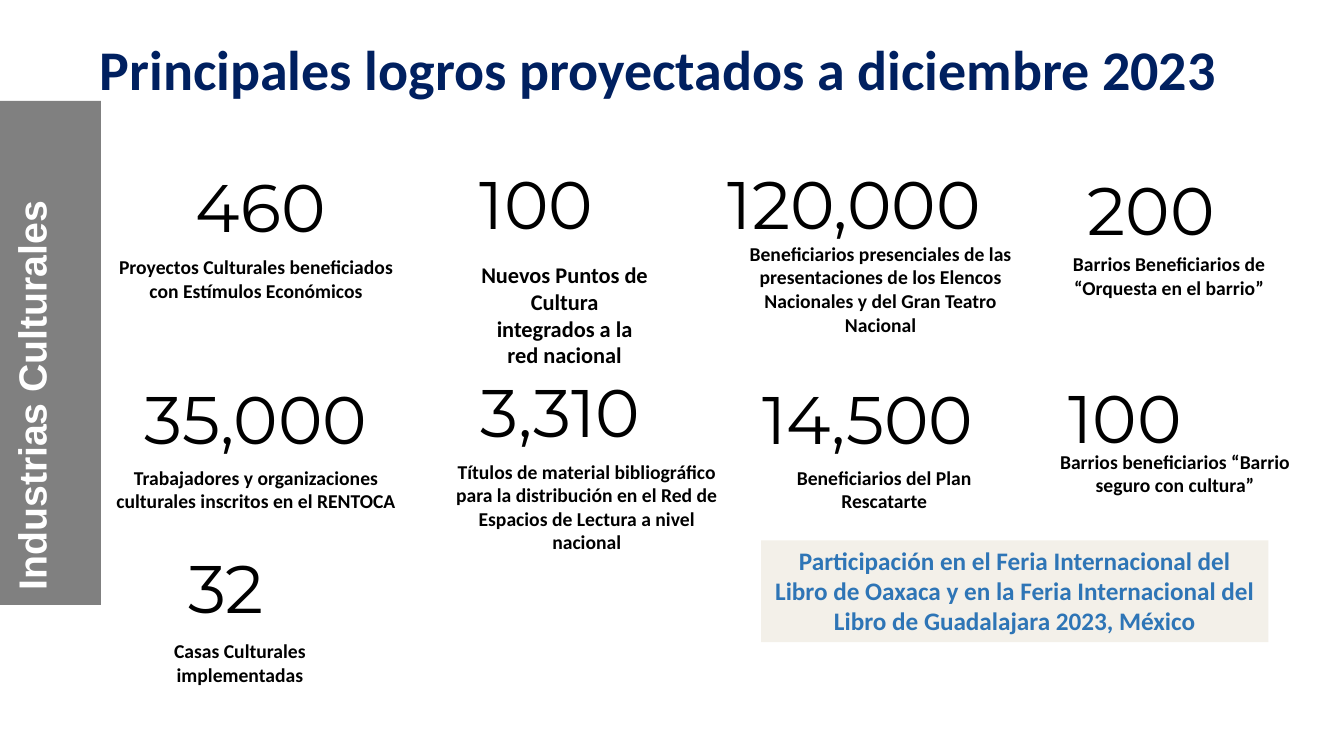
from pptx import Presentation
from pptx.dml.color import RGBColor
from pptx.enum.shapes import MSO_SHAPE
from pptx.enum.text import MSO_ANCHOR, PP_ALIGN
from pptx.util import Inches, Pt

LEFT, CENTER = PP_ALIGN.LEFT, PP_ALIGN.CENTER
TOP, MIDDLE = MSO_ANCHOR.TOP, MSO_ANCHOR.MIDDLE
RECT = MSO_SHAPE.RECTANGLE

# Content
TITLE = "Principales logros proyectados a diciembre 2023"
SIDE = "Industrias Culturales"
BANNER = ("Participación en el Feria Internacional del Libro de Oaxaca y en la "
          "Feria Internacional del Libro de Guadalajara 2023, México")

# Figure, its box and alignment; caption, its box and size
GOALS = [
    ("460", (1.5, 1.59, 2.17, 0.91), CENTER,
     "Proyectos Culturales beneficiados con Estímulos Económicos",
     (0.98, 2.48, 3.12, 0.57), 14),
    ("100", (4.66, 1.56, 1.55, 0.91), LEFT,
     "Nuevos Puntos de Cultura integrados a la red nacional",
     (4.66, 2.54, 1.88, 0.91), 16),
    ("120,000", (7.12, 1.56, 3.12, 0.91), LEFT,
     "Beneficiarios presenciales de las presentaciones de los Elencos "
     "Nacionales y del Gran Teatro Nacional",
     (7.12, 2.35, 3.23, 0.81), 14),
    ("200", (10.69, 1.62, 1.48, 0.85), LEFT,
     "Barrios Beneficiarios de “Orquesta en el barrio”",
     (10.34, 2.45, 2.51, 0.54), 14),
    ("35,000", (0.98, 3.69, 3.12, 0.91), CENTER,
     "Trabajadores y organizaciones culturales inscritos en el RENTOCA",
     (0.98, 4.57, 3.12, 0.57), 14),
    ("3,310", (4.67, 3.62, 2.22, 0.91), LEFT,
     "Títulos de material bibliográfico para la distribución en el Red de "
     "Espacios de Lectura a nivel nacional",
     (4.31, 4.51, 3.02, 0.81), 14),
    ("14,500", (7.46, 3.69, 2.67, 0.91), LEFT,
     "Beneficiarios del Plan Rescatarte",
     (7.46, 4.57, 2.62, 0.57), 14),
    ("100", (10.5, 3.68, 2.19, 0.82), LEFT,
     "Barrios beneficiarios “Barrio seguro con cultura”",
     (10.32, 4.41, 2.67, 0.73), 14),
    ("32", (1.77, 5.37, 1.1, 0.91), LEFT,
     "Casas Culturales implementadas",
     (1.44, 6.29, 1.88, 0.57), 14),
]


def color(code):
    return RGBColor.from_string(code)


def paint(shape, code):
    shape.fill.solid()
    shape.fill.fore_color.rgb = color(code)
    shape.line.fill.background()
    shape.shadow.inherit = False


def write(shape, text, size, ink="000000", face="Calibri", bold=True,
          align=CENTER, anchor=TOP):
    frame = shape.text_frame
    frame.word_wrap = True
    frame.vertical_anchor = anchor
    frame.text = text
    para = frame.paragraphs[0]
    para.alignment = align
    font = para.font
    font.name, font.size, font.bold = face, Pt(size), bold
    font.color.rgb = color(ink)
    return para


def add_text(box, *args, **style):
    shape = slide.shapes.add_textbox(*map(Inches, box))
    write(shape, *args, **style)
    return shape


def curve(a, b, c, d, steps=16):
    """Points along a cubic curve, after its start."""
    for i in range(1, steps + 1):
        t = i / steps
        u = 1 - t
        yield tuple(u**3 * p + 3 * u * u * t * q + 3 * u * t * t * r + t**3 * s
                    for p, q, r, s in zip(a, b, c, d))


deck = Presentation()
deck.slide_width, deck.slide_height = Inches(13.33), Inches(7.5)
slide = deck.slides.add_slide(deck.slide_layouts[5])

# Title
title = slide.shapes.title
title.left, title.top, title.width, title.height = map(
    Inches, (0.89, 0.04, 12.11, 1.36))
write(title, TITLE, 40, "002060", align=LEFT, anchor=MIDDLE).line_spacing = 0.9

# Side tab with two rounded corners
edge = [(0, 1.46), (0, 5.95),
        *curve((0, 5.95), (0, 6.2), (0.05, 6.39), (0.11, 6.39)),
        (0.68, 6.39), (0.68, 1.9),
        *curve((0.68, 1.9), (0.68, 1.66), (0.63, 1.46), (0.56, 1.46))]
pen = slide.shapes.build_freeform(0.56, 1.46, scale=Inches(1))
pen.add_line_segments(edge, close=True)
paint(pen.convert_to_shape(), "808080")

label = add_text((-2.16, 3.59, 4.94, 0.67), SIDE, 28, "FFFFFF", "Arial")
label.rotation = 270
label.text_frame.margin_top = label.text_frame.margin_bottom = Inches(0.1)

# Goals
for figure, spot, align, caption, place, size in GOALS:
    add_text(spot, figure, 48, face="Montserrat", bold=False, align=align)
    add_text(place, caption, size)

# Banner
banner = slide.shapes.add_shape(RECT, *map(Inches, (7.55, 5.36, 5.03, 1.01)))
paint(banner, "F3F0E9")
write(banner, BANNER, 18, "2E75B6")

deck.save("out.pptx")
